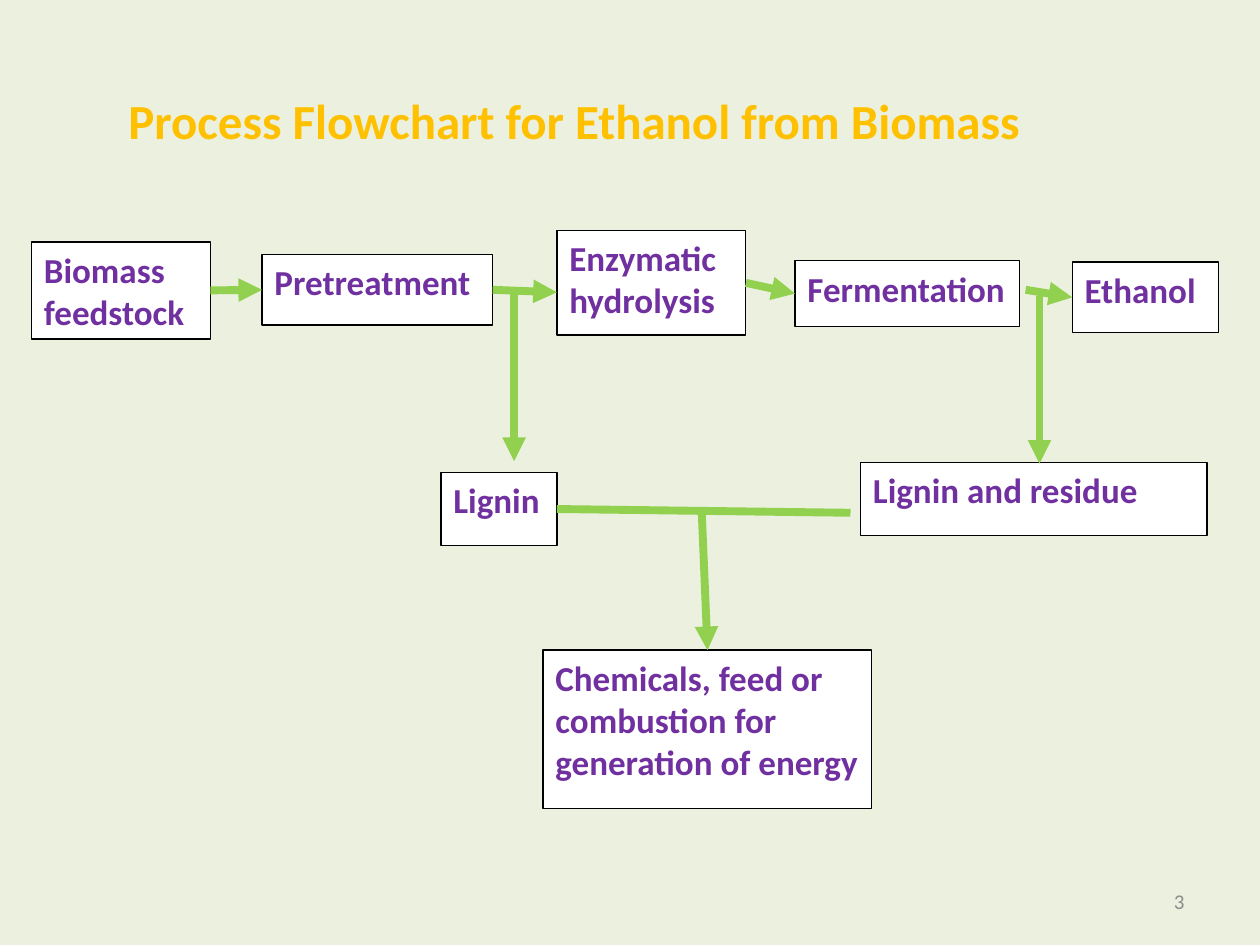
from dataclasses import dataclass

from lxml import etree
from pptx import Presentation
from pptx.dml.color import RGBColor
from pptx.enum.shapes import MSO_CONNECTOR, MSO_SHAPE
from pptx.enum.text import MSO_ANCHOR, PP_ALIGN
from pptx.oxml.ns import qn
from pptx.util import Inches, Pt

STRAIGHT = MSO_CONNECTOR.STRAIGHT
RECTANGLE = MSO_SHAPE.RECTANGLE
TOP, MIDDLE = MSO_ANCHOR.TOP, MSO_ANCHOR.MIDDLE
LEFT, RIGHT = PP_ALIGN.LEFT, PP_ALIGN.RIGHT
TOP_SIDE, LEFT_SIDE, RIGHT_SIDE = 0, 1, 3
COLUMNS, ROWS = 100, 75
CELL = Inches(10) / COLUMNS


@dataclass(frozen=True)
class Theme:
    """Colours, type sizes and line widths of the slide."""
    font: str = "Calibri"
    background: str = "EBF1DE"
    box_fill: str = "FFFFFF"
    box_line: str = "000000"
    box_text: str = "7030A0"
    arrow: str = "92D050"
    title: str = "FFC000"
    number: str = "8C8C8C"
    title_size: int = 28
    box_size: int = 20
    number_size: int = 12
    box_line_width: float = 0.75
    arrow_width: float = 4.5


@dataclass(frozen=True)
class Box:
    """An area of the slide in grid columns and rows."""
    left: float
    top: float
    width: float
    height: float

    def inner(self, left, top, width, height):
        """Return an area placed relative to this one."""
        return Box(self.left + left, self.top + top, width, height)

    def point(self, column, row):
        """Return a point placed relative to this area, in slide units."""
        return cells(self.left + column, self.top + row)

    def frame(self):
        """Return left, top, width and height in slide units."""
        return cells(self.left, self.top, self.width, self.height)


THEME = Theme()


def cells(*values):
    """Turn grid counts into slide units."""
    return tuple(round(value * CELL) for value in values)


def colour(code):
    """Turn a hexadecimal code into a colour."""
    return RGBColor.from_string(code)


def write(shape, text, size, code, bold=False, align=LEFT, anchor=TOP, space_after=0):
    """Put one styled paragraph into a shape."""
    frame = shape.text_frame
    frame.word_wrap = True
    frame.vertical_anchor = anchor
    para = frame.paragraphs[0]
    para.alignment = align
    para.space_after = Pt(space_after)
    span = para.add_run()
    span.text = text
    span.font.name = THEME.font
    span.font.size = Pt(size)
    span.font.bold = bold
    span.font.color.rgb = colour(code)


def add_step(page, box, text):
    """Draw one labelled step of the flowchart."""
    step = page.shapes.add_shape(RECTANGLE, *box.frame())
    step.shadow.inherit = False
    step.fill.solid()
    step.fill.fore_color.rgb = colour(THEME.box_fill)
    step.line.color.rgb = colour(THEME.box_line)
    step.line.width = Pt(THEME.box_line_width)
    write(step, text, THEME.box_size, THEME.box_text, bold=True, space_after=10)
    return step


def add_flow(page, start, end, source=None, target=None, arrowhead=True):
    """Draw a flow line, joined to (step, side) pairs where given."""
    flow = page.shapes.add_connector(STRAIGHT, *start, *end)
    flow.line.color.rgb = colour(THEME.arrow)
    flow.line.width = Pt(THEME.arrow_width)
    if arrowhead:
        etree.SubElement(flow.line._get_or_add_ln(), qn("a:tailEnd"), type="triangle")
    etree.SubElement(flow._element.spPr, qn("a:effectLst"))
    if source:
        flow.begin_connect(*source)
    if target:
        flow.end_connect(*target)


def draw_title(page, box):
    """Write the slide title."""
    title = page.shapes.add_textbox(*box.frame())
    write(title, "Process Flowchart for Ethanol from Biomass",
          THEME.title_size, THEME.title, bold=True)


def draw_main_process(page, box):
    """Draw the row of steps from feedstock to ethanol."""
    layout = (
        ("Biomass feedstock", 0, 0.9, 14.2, 7.7),
        ("Pretreatment", 18.3, 1.9, 18.3, 5.6),
        ("Enzymatic hydrolysis", 41.7, 0, 15, 8.3),
        ("Fermentation", 60.6, 2.4, 17.8, 5.2),
        ("Ethanol", 82.6, 2.5, 11.6, 5.6),
    )
    feedstock, pretreatment, hydrolysis, fermentation, ethanol = [
        add_step(page, box.inner(*area), text) for text, *area in layout
    ]
    flows = (
        ((14.2, 4.9), (18.3, 5), feedstock, pretreatment),
        ((36.6, 4.7), (41.7, 4.9), pretreatment, None),
        ((56.7, 4.5), (60.6, 4.9), hydrolysis, fermentation),
        ((78.9, 4.7), (82.6, 5), None, ethanol),
    )
    for start, end, source, target in flows:
        add_flow(page, box.point(*start), box.point(*end),
                 source and (source, RIGHT_SIDE), target and (target, LEFT_SIDE))


def draw_by_products(page, box):
    """Draw the by-products that leave the main process and their use."""
    lignin = add_step(page, box.inner(0, 14.2, 9.2, 5.8), "Lignin")
    add_step(page, box.inner(33.3, 13.4, 27.5, 5.8), "Lignin and residue")
    products = add_step(page, box.inner(8.1, 28.3, 26.1, 12.6),
                        "Chemicals, feed or combustion for generation of energy")
    for column, row in ((5.8, 0), (47.5, 0.2)):
        add_flow(page, box.point(column, row), box.point(column, row + 13.3))
    add_flow(page, box.point(9.2, 17.5), box.point(32.5, 17.4),
             source=(lignin, RIGHT_SIDE), arrowhead=False)
    add_flow(page, box.point(20.7, 17.4), box.point(20.8, 28.3),
             target=(products, TOP_SIDE))


def draw_page_number(page, box):
    """Write the page number."""
    number = page.shapes.add_textbox(*box.frame())
    write(number, "3", THEME.number_size, THEME.number, align=RIGHT, anchor=MIDDLE)


def main():
    """Build the deck and save it."""
    deck = Presentation()
    deck.slide_width, deck.slide_height = cells(COLUMNS, ROWS)
    page = deck.slides.add_slide(deck.slide_layouts[6])
    page.background.fill.solid()
    page.background.fill.fore_color.rgb = colour(THEME.background)
    draw_main_process(page, Box(2.5, 18.3, 94.2, 8.3))
    draw_by_products(page, Box(35, 23.3, 60.8, 40.9))
    draw_title(page, Box(9.2, 6.7, 85.8, 5.7))
    draw_page_number(page, Box(71.7, 69.5, 23.3, 4))
    deck.save("out.pptx")


if __name__ == "__main__":
    main()
